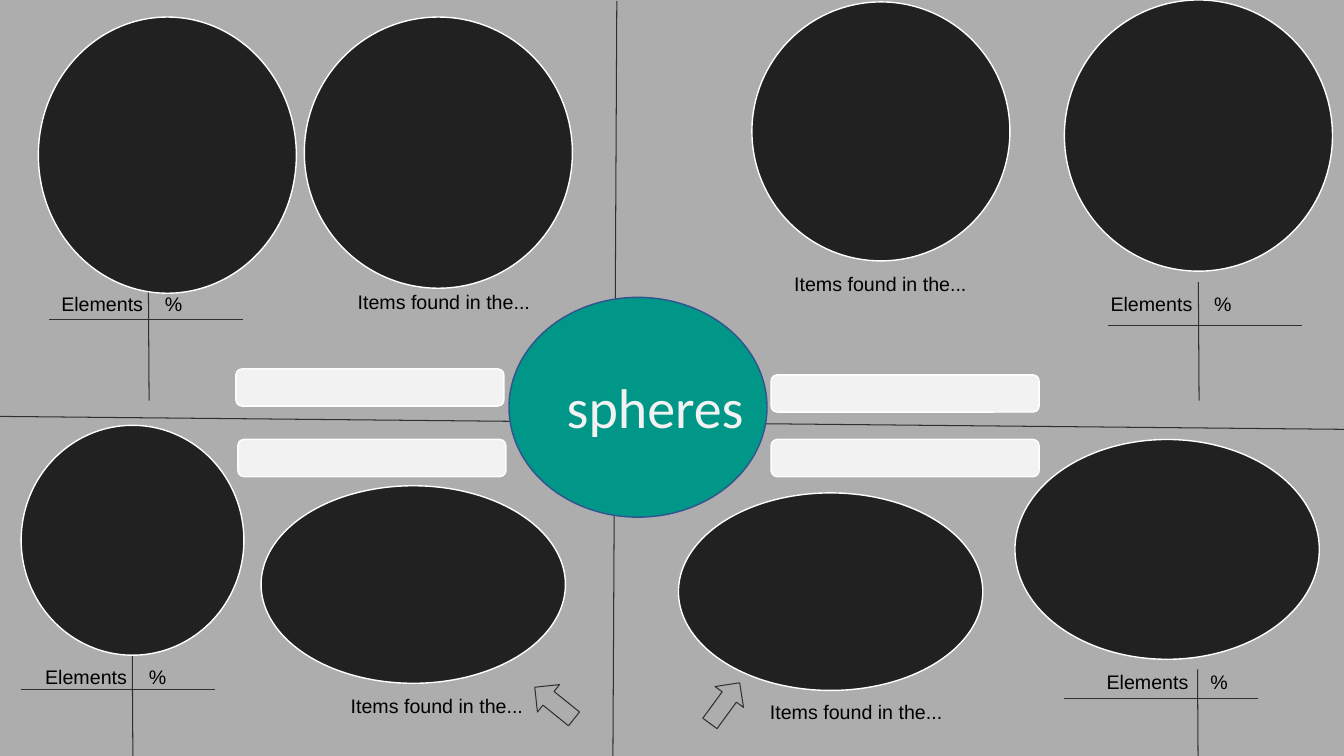
from dataclasses import dataclass
from typing import Optional

from lxml.etree import SubElement
from pptx import Presentation
from pptx.dml.color import RGBColor
from pptx.enum.shapes import MSO_CONNECTOR as Connector, MSO_SHAPE as Preset
from pptx.enum.text import MSO_ANCHOR as Anchor, MSO_AUTO_SIZE as AutoSize, PP_ALIGN as Align
from pptx.oxml.ns import qn
from pptx.util import Pt

COLORS = {
    "night": "212121",
    "board": "ADADAD",
    "ink": "303030",
    "teal": "009688",
    "navy": "31538F",
    "white": "FFFFFF",
    "pale": "F2F2F2",
    "black": "000000",
}


@dataclass(frozen=True)
class Box:
    left: float
    top: float
    width: float
    height: float


@dataclass(frozen=True)
class Segment:
    x1: float
    y1: float
    x2: float
    y2: float


@dataclass(frozen=True)
class Look:
    preset: Preset
    fill: str
    line: str
    weight: float


@dataclass(frozen=True)
class Label:
    left: float
    top: float
    words: str
    tab: Optional[float] = None


@dataclass(frozen=True)
class Quadrant:
    globes: tuple[Box, Box]
    items: tuple[float, float]
    elements: tuple[float, float]
    stem: tuple[float, float]
    rule: tuple[float, float]
    name_bar: tuple[float, float]


BOARD = Look(Preset.RECTANGLE, "board", "ink", 0.75)
CENTER = Look(Preset.OVAL, "teal", "navy", 1)
GLOBE = Look(Preset.OVAL, "night", "white", 1)
NAME_BAR = Look(Preset.ROUNDED_RECTANGLE, "pale", "white", 1)
POINTER = Look(Preset.LEFT_ARROW, "board", "ink", 0.75)

DIVIDERS = [Segment(-4.3, 297.4, 961.9, 306.7), Segment(440.6, 0.7, 437.8, 544.3)]
POINTERS = [(Box(378, 489.6, 36, 25.2), 38.9), (Box(499.7, 489.6, 36, 25.2), 126.2)]

QUADRANTS = [
    Quadrant((Box(27.4, 12.2, 184.3, 197.3), Box(217.4, 12.2, 191.5, 193.7)),
             items=(248.4, 200.2), elements=(36.7, 201.6), stem=(106, 201.6),
             rule=(35.3, 228.2), name_bar=(168.5, 263.5)),
    Quadrant((Box(537.1, 1.4, 184.3, 185), Box(760.3, 0, 191.5, 193.7)),
             items=(560.2, 187.2), elements=(786.2, 201.6), stem=(856, 201.6),
             rule=(791.3, 232.6), name_bar=(550.8, 267.8)),
    Quadrant((Box(15.1, 303.8, 159.1, 164.2), Box(186.5, 347, 217.4, 141.1)),
             items=(243.4, 488.2), elements=(25.2, 468), stem=(94.5, 468),
             rule=(15.1, 492.5), name_bar=(169.9, 313.9)),
    Quadrant((Box(725, 313.9, 217.4, 157), Box(484.6, 352.1, 217.4, 141.1)),
             items=(542.9, 492.5), elements=(783.4, 471.6), stem=(855.4, 478.1),
             rule=(760.3, 499), name_bar=(550.8, 313.9)),
]

STEM_LENGTH = 84.6
RULE_LENGTH = 138.6
LABEL_WIDTH, LABEL_HEIGHT = 138.4, 58
LABEL_INSET = 7.2
PERCENT_TAB = 74


def color(name: str) -> RGBColor:
    return RGBColor.from_string(COLORS[name])


def draw_shape(slide, box: Box, look: Look, rotation: float = 0) -> None:
    shape = slide.shapes.add_shape(
        look.preset, Pt(box.left), Pt(box.top), Pt(box.width), Pt(box.height))
    shape.shadow.inherit = False
    shape.fill.solid()
    shape.fill.fore_color.rgb = color(look.fill)
    shape.line.color.rgb = color(look.line)
    shape.line.width = Pt(look.weight)
    shape.rotation = rotation


def draw_line(slide, segment: Segment) -> None:
    connector = slide.shapes.add_connector(
        Connector.STRAIGHT, Pt(segment.x1), Pt(segment.y1), Pt(segment.x2), Pt(segment.y2))
    connector.line.color.rgb = color("ink")
    connector.line.width = Pt(0.75)
    SubElement(connector._element.spPr, qn("a:effectLst"))


def add_run(paragraph, words: str, font: str, size: float, tint: str) -> None:
    run = paragraph.add_run()
    run.text = words
    run.font.name = font
    run.font.size = Pt(size)
    run.font.color.rgb = color(tint)


def draw_label(slide, label: Label) -> None:
    frame = slide.shapes.add_textbox(
        Pt(label.left), Pt(label.top), Pt(LABEL_WIDTH), Pt(LABEL_HEIGHT)).text_frame
    frame.word_wrap = True
    frame.margin_left = frame.margin_right = Pt(LABEL_INSET)
    frame.margin_top = frame.margin_bottom = Pt(LABEL_INSET)
    paragraph = frame.paragraphs[0]
    if label.tab is not None:
        stops = SubElement(paragraph._p.get_or_add_pPr(), qn("a:tabLst"))
        SubElement(stops, qn("a:tab"), pos=str(Pt(label.tab)), algn="l")
    add_run(paragraph, label.words, "Arial", 14, "black")


def place_title(slide, words: str) -> None:
    title = slide.shapes.title
    title.left, title.top, title.width, title.height = Pt(385.2), Pt(262.8), Pt(165.6), Pt(55.4)
    slide.shapes._spTree.append(title._element)
    frame = title.text_frame
    frame.auto_size = AutoSize.NONE
    frame.word_wrap = True
    frame.vertical_anchor = Anchor.TOP
    frame.margin_left = frame.margin_right = Pt(7.2)
    frame.margin_top = frame.margin_bottom = Pt(3.6)
    frame.paragraphs[0].alignment = Align.CENTER
    add_run(frame.paragraphs[0], words, "Calibri", 40, "pale")


def draw_quadrant(slide, quadrant: Quadrant) -> None:
    stem_x, stem_y = quadrant.stem
    rule_x, rule_y = quadrant.rule
    draw_line(slide, Segment(stem_x, stem_y, stem_x + 0.5, stem_y + STEM_LENGTH))
    draw_line(slide, Segment(rule_x, rule_y, rule_x + RULE_LENGTH, rule_y))
    for globe in quadrant.globes:
        draw_shape(slide, globe, GLOBE)
    draw_label(slide, Label(*quadrant.elements, "Elements\t%", PERCENT_TAB))
    draw_label(slide, Label(*quadrant.items, "Items found in the..."))
    draw_shape(slide, Box(*quadrant.name_bar, 191.5, 26.6), NAME_BAR)


def main() -> None:
    deck = Presentation()
    deck.slide_width, deck.slide_height = Pt(960), Pt(540)
    slide = deck.slides.add_slide(deck.slide_layouts.get_by_name("Title Only"))
    slide.background.fill.solid()
    slide.background.fill.fore_color.rgb = color("night")
    draw_shape(slide, Box(-0.7, -12.2, 966.2, 578.2), BOARD)
    for divider in DIVIDERS:
        draw_line(slide, divider)
    draw_shape(slide, Box(363.6, 212.4, 184.3, 157), CENTER)
    place_title(slide, "spheres")
    for quadrant in QUADRANTS:
        draw_quadrant(slide, quadrant)
    for box, rotation in POINTERS:
        draw_shape(slide, box, POINTER, rotation)
    deck.save("out.pptx")


if __name__ == "__main__":
    main()
